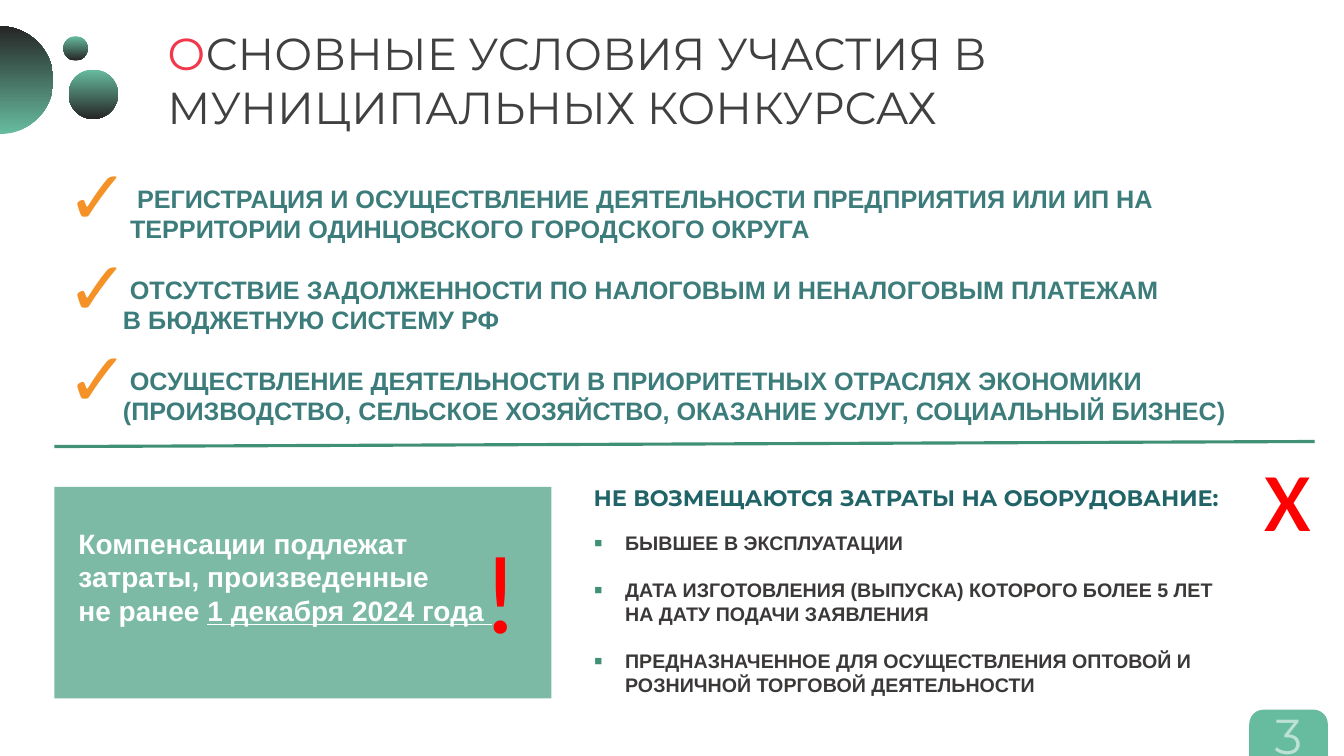
from lxml.etree import SubElement as Sub
from pptx import Presentation
from pptx.dml.color import RGBColor as RGB
from pptx.enum.shapes import MSO_CONNECTOR as LINK, MSO_SHAPE as SHAPE
from pptx.enum.text import MSO_ANCHOR as ANCHOR, MSO_AUTO_SIZE as FIT, PP_ALIGN as ALIGN
from pptx.oxml.ns import qn
from pptx.util import Inches, Pt

HUE = {
    "mint": "67BC9F", "black": "262626", "pale": "BCE2D5", "red": "FF0000",
    "rose": "F13749", "gray": "404040", "teal": "3C7C7B", "amber": "F49228",
    "green": "409075", "panel": "459D80", "white": "FFFFFF",
    "ink": "3B3838", "deep": "206468",
}

TERMS = [
    [" РЕГИСТРАЦИЯ И ОСУЩЕСТВЛЕНИЕ ДЕЯТЕЛЬНОСТИ ПРЕДПРИЯТИЯ ИЛИ ИП НА",
     "ТЕРРИТОРИИ ОДИНЦОВСКОГО ГОРОДСКОГО ОКРУГА"],
    ["ОТСУТСТВИЕ ЗАДОЛЖЕННОСТИ ПО НАЛОГОВЫМ И НЕНАЛОГОВЫМ ПЛАТЕЖАМ",
     "В БЮДЖЕТНУЮ СИСТЕМУ РФ"],
    ["ОСУЩЕСТВЛЕНИЕ ДЕЯТЕЛЬНОСТИ В ПРИОРИТЕТНЫХ ОТРАСЛЯХ ЭКОНОМИКИ",
     "(ПРОИЗВОДСТВО, СЕЛЬСКОЕ ХОЗЯЙСТВО, ОКАЗАНИЕ УСЛУГ, СОЦИАЛЬНЫЙ БИЗНЕС)"],
]
LIMITS = [
    ["БЫВШЕЕ В ЭКСПЛУАТАЦИИ"],
    ["ДАТА ИЗГОТОВЛЕНИЯ (ВЫПУСКА) КОТОРОГО БОЛЕЕ 5 ЛЕТ НА ДАТУ ПОДАЧИ ЗАЯВЛЕНИЯ"],
    ["ПРЕДНАЗНАЧЕННОЕ ДЛЯ ОСУЩЕСТВЛЕНИЯ ОПТОВОЙ И РОЗНИЧНОЙ ТОРГОВОЙ ДЕЯТЕЛЬНОСТИ"],
]


def color(name):
    return RGB.from_string(HUE[name])


def place(item, box):
    item.left, item.top, item.width, item.height = map(Inches, box)


def add_run(para, text, size, hue, face="Arial", bold=False, under=False):
    run = para.add_run()
    run.text = text
    font = run.font
    font.size, font.name, font.bold, font.underline = Pt(size), face, bold, under
    font.color.rgb = color(hue)


def set_frame(frame, wrap=True, anchor=ANCHOR.TOP):
    frame.auto_size = FIT.NONE
    frame.word_wrap = wrap
    frame.vertical_anchor = anchor


def add_text(slide, box, wrap=True):
    frame = slide.shapes.add_textbox(*map(Inches, box)).text_frame
    set_frame(frame, wrap)
    return frame


def add_label(slide, box, text, size, hue, face, bold=False):
    frame = add_text(slide, box, False)
    add_run(frame.paragraphs[0], text, size, hue, face, bold)


def add_shape(slide, kind, box):
    shape = slide.shapes.add_shape(kind, *map(Inches, box))
    shape.shadow.inherit = False
    shape.line.fill.background()
    return shape


def fill_flat(shape, hue, alpha=None):
    shape.fill.solid()
    shape.fill.fore_color.rgb = color(hue)
    if alpha:
        tint = next(shape.fill._xPr.iter(qn("a:srgbClr")))
        Sub(tint, qn("a:alpha"), val=str(alpha * 1000))


def add_ball(slide, kind, box):
    ball = add_shape(slide, kind, box)
    ball.fill.gradient()
    ball.fill.gradient_angle = 270
    for stop, hue in zip(ball.fill.gradient_stops, ("mint", "black")):
        stop.color.rgb = color(hue)
    return ball


def add_mark(para, sign, hue, scale, indent):
    props = para._p.get_or_add_pPr()
    props.set("marL", str(Inches(indent)))
    props.set("indent", str(-Inches(indent)))
    Sub(Sub(props, qn("a:buClr")), qn("a:srgbClr"), val=HUE[hue])
    Sub(props, qn("a:buSzPct"), val=str(scale * 1000))
    Sub(props, qn("a:buFont"), typeface="Arial")
    Sub(props, qn("a:buChar"), char=sign)


def fill_list(holder, box, items, size, hue, mark, indents):
    place(holder, box)
    frame = holder.text_frame
    set_frame(frame)
    pitch = Pt(size * 1.2)
    for num, (lines, indent) in enumerate(zip(items, indents)):
        para = frame.add_paragraph() if num else frame.paragraphs[0]
        para.line_spacing = para.space_after = pitch
        para.space_before = Pt(0)
        add_mark(para, *mark, indent)
        for row, line in enumerate(lines):
            if row:
                para.add_line_break()
            add_run(para, line, size, hue, bold=True)


def fill_title(title):
    place(title, (1.54, 0.2, 10.99, 1.2))
    frame = title.text_frame
    set_frame(frame)
    frame.margin_left = frame.margin_right = Inches(0.12)
    frame.margin_top = frame.margin_bottom = Inches(0.06)
    para = frame.paragraphs[0]
    para.alignment = ALIGN.LEFT
    add_run(para, "О", 32, "rose", "Montserrat")
    add_run(para, "СНОВНЫЕ УСЛОВИЯ УЧАСТИЯ В МУНИЦИПАЛЬНЫХ КОНКУРСАХ",
            32, "gray", "Montserrat")


def add_rule(slide, *ends):
    rule = slide.shapes.add_connector(LINK.STRAIGHT, *map(Inches, ends))
    rule.line.color.rgb = color("green")
    rule.line.width = Pt(2.25)
    Sub(rule._element.spPr, qn("a:effectLst"))


def add_badge(slide, text):
    badge = add_shape(slide, SHAPE.ROUND_2_SAME_RECTANGLE, (12.39, 7.04, 0.78, 0.46))
    badge.adjustments[0] = 0.31
    fill_flat(badge, "mint")
    frame = badge.text_frame
    set_frame(frame, anchor=ANCHOR.MIDDLE)
    frame.margin_left = frame.margin_right = 0
    frame.paragraphs[0].alignment = ALIGN.CENTER
    add_run(frame.paragraphs[0], text, 35, "pale", "Montserrat")


def add_panel(slide):
    panel = add_shape(slide, SHAPE.RECTANGLE, (0.54, 4.83, 4.93, 2.1))
    fill_flat(panel, "panel", 70)
    frame = add_text(slide, (0.68, 5.17, 4.33, 1.11))
    first, last = frame.paragraphs[0], frame.add_paragraph()
    first.line_spacing = last.line_spacing = Pt(24)
    add_run(first, "Компенсации подлежат затраты, произведенные", 20, "white", bold=True)
    add_run(last, "не ранее ", 20, "white", bold=True)
    add_run(last, "1 декабря 2024 года ", 20, "white", bold=True, under=True)


def main():
    deck = Presentation()
    deck.slide_width, deck.slide_height = Inches(13.33), Inches(7.5)
    slide = deck.slides.add_slide(deck.slide_layouts[3])
    title, terms, limits = slide.placeholders

    fill_title(title)
    half = add_ball(slide, SHAPE.PIE, (-0.54, 0.26, 1.07, 1.07))
    half.adjustments[0], half.adjustments[1] = 54, 162
    half.rotation = 180
    add_ball(slide, SHAPE.OVAL, (0.68, 0.69, 0.49, 0.49))
    add_ball(slide, SHAPE.OVAL, (0.63, 0.36, 0.24, 0.24))
    add_badge(slide, "3")

    fill_list(terms, (0.56, 1.77, 12.69, 2.83), TERMS, 18, "teal",
              ("✓", "amber", 300), (0.63, 0.56, 0.56))
    add_rule(slide, 0.54, 4.43, 13.04, 4.38)
    fill_list(limits, (5.79, 5.22, 6.6, 1.82), LIMITS, 14, "ink",
              ("▪", "green", 130), (0.31, 0.31, 0.31))
    add_panel(slide)
    add_label(slide, (5.79, 4.75, 6.82, 0.37),
              "НЕ ВОЗМЕЩАЮТСЯ ЗАТРАТЫ НА ОБОРУДОВАНИЕ:", 16, "deep", "Montserrat", True)
    for left, top, sign in ((12.43, 4.11, "х"), (4.69, 5.12, "!")):
        add_label(slide, (left, top, 0.66, 1.45), sign, 80, "red", "Calibri")
    deck.save("out.pptx")


if __name__ == "__main__":
    main()
